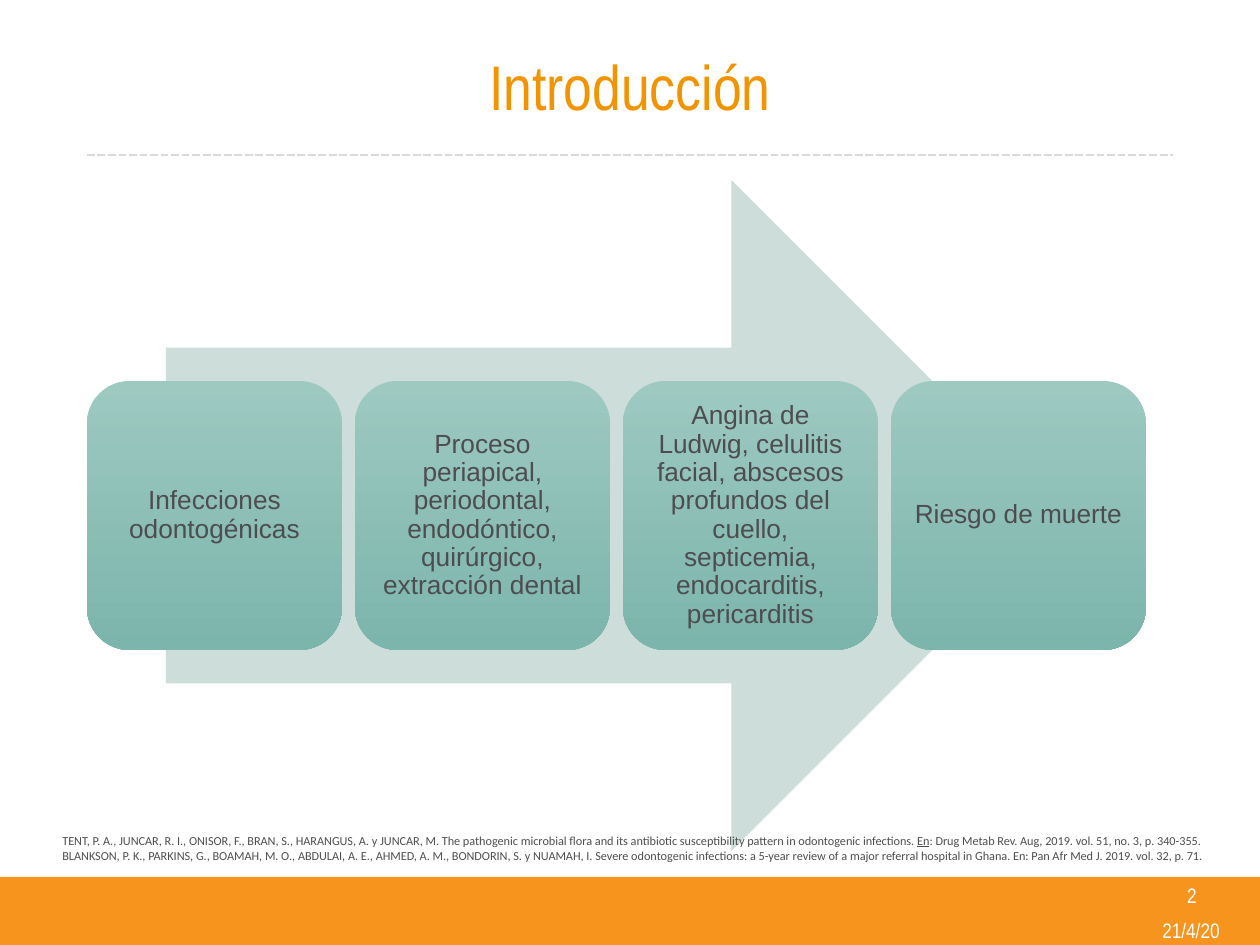
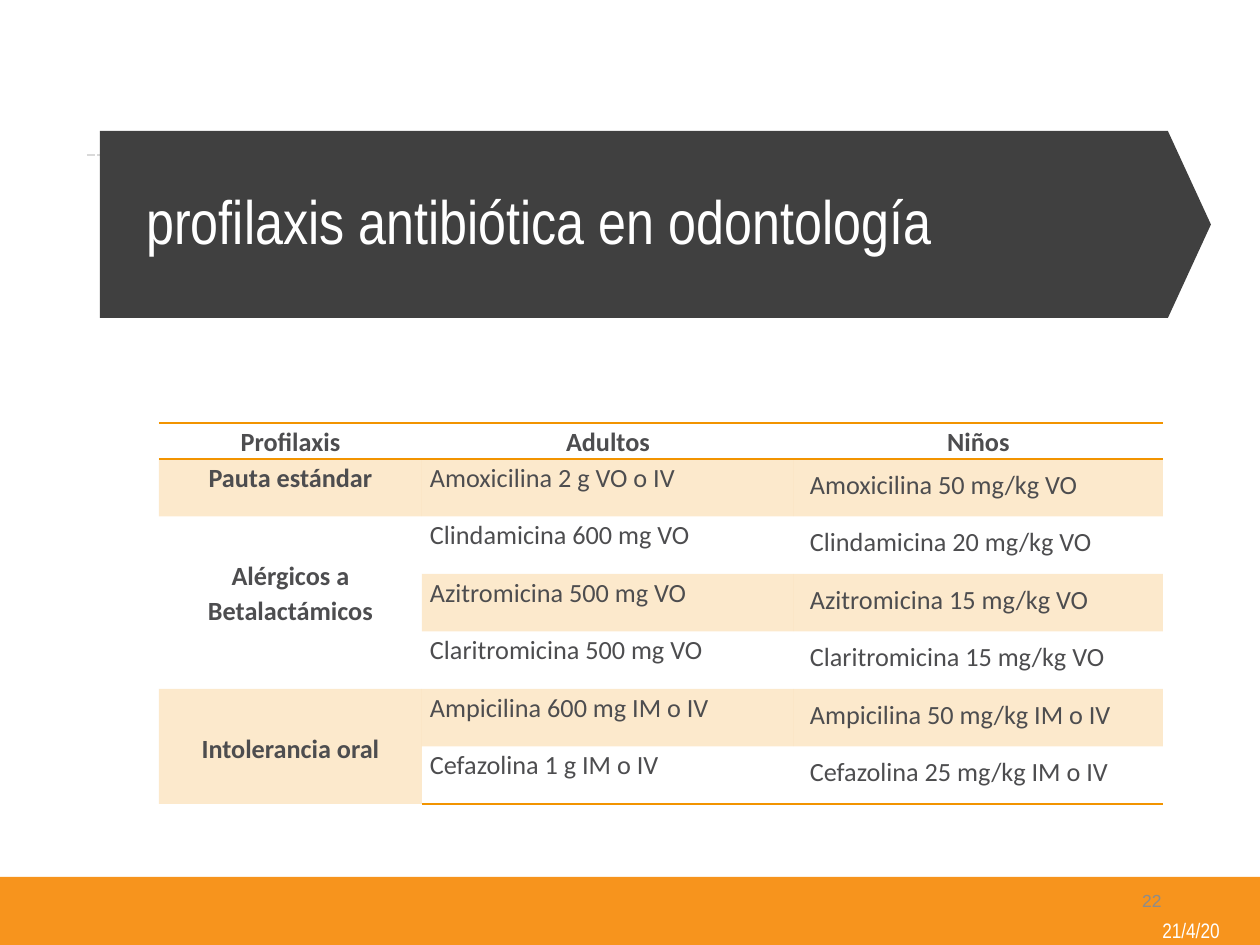
import pptx
import pptx.util
import pptx.dml.color
import pptx.enum.dml
import pptx.enum.shapes
import pptx.enum.text
import pptx.oxml
import pptx.oxml.ns
import lxml.etree

RGB = pptx.dml.color.RGBColor
SHAPE = pptx.enum.shapes.MSO_SHAPE
ALIGN = pptx.enum.text.PP_ALIGN
ANCHOR = pptx.enum.text.MSO_ANCHOR
Pt = pptx.util.Pt

PX_PER_INCH = 126
SLIDE_WIDTH, SLIDE_HEIGHT = 1260, 945

WHITE = RGB(0xFF, 0xFF, 0xFF)
BAND_ORANGE = RGB(0xF7, 0x94, 0x1D)
ACCENT = RGB(0xF2, 0x94, 0x00)
INK = RGB(0x4D, 0x4D, 0x4F)
RULE_GREY = RGB(0xD9, 0xD9, 0xD9)
NUMBER_GREY = RGB(0x8C, 0x8C, 0x8C)
BANNER_DARK = RGB(0x40, 0x40, 0x40)
ARROW_MIST = RGB(0xCC, 0xDD, 0xDA)
STEP_TOP = RGB(0x9D, 0xC9, 0xC1)
STEP_BOTTOM = RGB(0x7C, 0xB5, 0xAC)

TITLE_FONT = {"name": "Arial Narrow", "size": Pt(36)}
BANNER_FONT = {"name": "Arial Narrow", "size": Pt(35)}
FOOTER_FONT = {"name": "Arial Narrow", "size": Pt(12)}
NUMBER_FONT = {"name": "Arial", "size": Pt(10)}
STEP_FONT = {"name": "Arial", "size": Pt(15)}
REFERENCE_FONT = {"name": "Calibri", "size": Pt(7)}
DOSE_FONT = {"name": "Calibri", "size": Pt(15), "bold": False}
LABEL_FONT = {**DOSE_FONT, "bold": True}

CENTERED = {"alignment": ALIGN.CENTER}
JUSTIFIED = {"alignment": ALIGN.JUSTIFY}
RIGHT = {"alignment": ALIGN.RIGHT}
TIGHT_LEFT = {"alignment": ALIGN.LEFT, "line_spacing": 0.9}
TIGHT_CENTER = {"alignment": ALIGN.CENTER, "line_spacing": 0.9}
CELL_LEFT = {"alignment": ALIGN.LEFT, "line_spacing": 1.07}
CELL_CENTER = {"alignment": ALIGN.CENTER, "line_spacing": 1.07}

DATE = "21/4/20"
INTRO_TITLE = "Introducción"
STEPS = [
    "Infecciones odontogénicas",
    "Proceso periapical, periodontal, endodóntico, quirúrgico, extracción dental",
    "Angina de Ludwig, celulitis facial, abscesos profundos del cuello, "
    "septicemia, endocarditis, pericarditis",
    "Riesgo de muerte",
]
REFERENCES = [
    [
        ("TENT, P. A., JUNCAR, R. I., ONISOR, F., BRAN, S., HARANGUS, A. y JUNCAR, M. "
         "The pathogenic microbial flora and its antibiotic susceptibility pattern "
         "in odontogenic infections. ", {}),
        ("En", {"underline": True}),
        (": Drug Metab Rev. Aug, 2019. vol. 51, no. 3, p. 340-355.", {}),
    ],
    [
        ("BLANKSON, P. K., PARKINS, G., BOAMAH, M. O., ABDULAI, A. E., AHMED, A. M., "
         "BONDORIN, S. y NUAMAH, I. Severe odontogenic infections: a 5-year review of a "
         "major referral hospital in Ghana. En: Pan Afr Med J. 2019. vol. 32, p. 71.", {}),
    ],
]

PROPHYLAXIS_TITLE = "profilaxis antibiótica en odontología"
HEADINGS = ["Profilaxis", "Adultos", "Niños"]
REGIMENS = [
    {"label": ["Pauta estándar"], "tinted": True, "margins": (8, 1, 8, 0),
     "doses": [("Amoxicilina 2 g VO o IV", "Amoxicilina 50 mg/kg VO")]},
    {"label": ["Alérgicos a", "Betalactámicos"], "tinted": False, "margins": (16, 42, 16, 8),
     "doses": [("Clindamicina 600 mg VO", "Clindamicina 20 mg/kg VO"),
               ("Azitromicina 500 mg VO", "Azitromicina 15 mg/kg VO"),
               ("Claritromicina 500 mg VO", "Claritromicina 15 mg/kg VO")]},
    {"label": ["Intolerancia oral"], "tinted": True, "margins": (16, 42, 16, 8),
     "doses": [("Ampicilina 600 mg IM o IV", "Ampicilina 50 mg/kg IM o IV"),
               ("Cefazolina 1 g IM o IV", "Cefazolina 25 mg/kg IM o IV")]},
]
HEADING_MARGINS = (13, 1, 13, 0)
ADULT_MARGINS = (8, 1, 8, 0)
CHILD_MARGINS = (16, 8, 16, 8)
COLUMN_WIDTHS = [263, 372, 369]
TABLE_LEFT, TABLE_TOP, TABLE_HEIGHT, HEADING_HEIGHT = 159, 423, 381, 36
TINT_ALPHA = 20


def px(length):
    return round(length * pptx.util.Inches(1) / PX_PER_INCH)


def box(*lengths):
    return [px(length) for length in lengths]


def apply(target, values):
    for key, value in values.items():
        setattr(target, key, value)


def margins(left, top, right, bottom):
    return {"margin_left": px(left), "margin_top": px(top),
            "margin_right": px(right), "margin_bottom": px(bottom)}


def write(frame, lines, font, color, layout):
    for index, line in enumerate(lines):
        paragraph = frame.add_paragraph() if index else frame.paragraphs[0]
        apply(paragraph, layout)
        pieces = [(line, {})] if isinstance(line, str) else line
        for text, extra in pieces:
            run = paragraph.add_run()
            run.text = text
            apply(run.font, {**font, **extra})
            run.font.color.rgb = color


def add_text(slide, place, lines, font, color, layout, anchor=ANCHOR.MIDDLE):
    frame = slide.shapes.add_textbox(*box(*place)).text_frame
    apply(frame, {"word_wrap": True, "vertical_anchor": anchor})
    write(frame, lines, font, color, layout)


def add_figure(slide, preset, place, color=None):
    figure = slide.shapes.add_shape(preset, *box(*place))
    figure.shadow.inherit = False
    figure.line.fill.background()
    if color is not None:
        figure.fill.solid()
        figure.fill.fore_color.rgb = color
    return figure


def add_base_slide(deck):
    slide = deck.slides.add_slide(deck.slide_layouts[6])
    add_figure(slide, SHAPE.RECTANGLE, (0, 877, SLIDE_WIDTH, SLIDE_HEIGHT - 877), BAND_ORANGE)
    add_text(slide, (1124, 917, 134, 26), [DATE], FOOTER_FONT, WHITE, CENTERED)
    rule = slide.shapes.add_connector(
        pptx.enum.shapes.MSO_CONNECTOR.STRAIGHT, *box(87, 155, 1173, 155))
    rule.line.color.rgb = RULE_GREY
    apply(rule.line, {"width": Pt(1.5), "dash_style": pptx.enum.dml.MSO_LINE.SQUARE_DOT})
    lxml.etree.SubElement(rule._element.spPr, pptx.oxml.ns.qn("a:effectLst"))
    return slide


def add_step(slide, index, text):
    step = add_figure(slide, SHAPE.ROUNDED_RECTANGLE, (87 + 268 * index, 381, 255, 269))
    step.fill.gradient()
    step.fill.gradient_angle = 270
    for stop, position, color in zip(
            step.fill.gradient_stops, (0, 1), (STEP_TOP, STEP_BOTTOM)):
        stop.position = position
        stop.color.rgb = color
    apply(step.text_frame, {"word_wrap": True, "vertical_anchor": ANCHOR.MIDDLE,
                            **margins(8, 8, 8, 8)})
    write(step.text_frame, [text], STEP_FONT, INK, TIGHT_CENTER)


def build_introduction(deck):
    slide = add_base_slide(deck)
    add_figure(slide, SHAPE.RIGHT_ARROW, (166, 180, 901, 671), ARROW_MIST)
    for index, text in enumerate(STEPS):
        add_step(slide, index, text)
    add_text(slide, (1126, 876, 132, 38), ["2"], FOOTER_FONT, WHITE, CENTERED)
    add_text(slide, (87, 18, 1086, 135), [INTRO_TITLE], TITLE_FONT, ACCENT, CENTERED)
    add_text(slide, (50, 827, 1210, 43), REFERENCES, REFERENCE_FONT, INK, JUSTIFIED, ANCHOR.TOP)


def finish_cell(cell, lined_sides, tinted):
    properties = cell._tc.get_or_add_tcPr()
    for side in "LRTB":
        edge = lxml.etree.SubElement(properties, pptx.oxml.ns.qn(f"a:ln{side}"))
        if side in lined_sides:
            edge.set("w", str(Pt(1)))
            paint = lxml.etree.SubElement(edge, pptx.oxml.ns.qn("a:solidFill"))
            lxml.etree.SubElement(paint, pptx.oxml.ns.qn("a:srgbClr"), val=str(ACCENT))
        else:
            lxml.etree.SubElement(edge, pptx.oxml.ns.qn("a:noFill"))
    if tinted:
        cell.fill.solid()
        cell.fill.fore_color.rgb = ACCENT
        tint = properties.find(pptx.oxml.ns.qn("a:solidFill"))[0]
        lxml.etree.SubElement(tint, pptx.oxml.ns.qn("a:alpha"), val=str(TINT_ALPHA * 1000))
    else:
        cell.fill.background()


def fill_cell(cell, lines, font, layout, insets):
    apply(cell, {"vertical_anchor": ANCHOR.TOP, **margins(*insets)})
    write(cell.text_frame, lines, font, INK, layout)


def add_regimen_table(slide):
    dose_count = sum(len(regimen["doses"]) for regimen in REGIMENS)
    table = slide.shapes.add_table(
        dose_count + 1, len(HEADINGS),
        *box(TABLE_LEFT, TABLE_TOP, sum(COLUMN_WIDTHS), TABLE_HEIGHT)).table
    apply(table, {"first_row": False, "horz_banding": False})
    for column, width in zip(table.columns, COLUMN_WIDTHS):
        column.width = px(width)
    for index, row in enumerate(table.rows):
        row.height = px((TABLE_HEIGHT - HEADING_HEIGHT) / dose_count if index else HEADING_HEIGHT)

    for column, heading in enumerate(HEADINGS):
        cell = table.cell(0, column)
        fill_cell(cell, [heading], LABEL_FONT, CELL_CENTER, HEADING_MARGINS)
        finish_cell(cell, "TB", False)

    row = 1
    for regimen in REGIMENS:
        first = row
        for adult, child in regimen["doses"]:
            sides = ("T" if row == 1 else "") + ("B" if row == dose_count else "")
            striped = row % 2 == 1
            for column, tinted in enumerate((regimen["tinted"], striped, striped)):
                finish_cell(table.cell(row, column), sides, tinted)
            fill_cell(table.cell(row, 1), [adult], DOSE_FONT, CELL_LEFT, ADULT_MARGINS)
            fill_cell(table.cell(row, 2), [child], DOSE_FONT, CELL_LEFT, CHILD_MARGINS)
            row += 1
        label = table.cell(first, 0)
        if row - first > 1:
            label.merge(table.cell(row - 1, 0))
        fill_cell(label, regimen["label"], LABEL_FONT, CELL_CENTER, regimen["margins"])


def build_prophylaxis(deck):
    slide = add_base_slide(deck)
    banner = add_figure(slide, SHAPE.RIGHT_ARROW, (100, 131, 1111, 187), BANNER_DARK)
    banner.adjustments[0] = 1
    banner.adjustments[1] = 0.23
    add_text(slide, (134, 166, 1036, 118), [PROPHYLAXIS_TITLE], BANNER_FONT, WHITE, TIGHT_LEFT)
    add_text(slide, (890, 876, 284, 50), ["22"], NUMBER_FONT, NUMBER_GREY, RIGHT)
    add_regimen_table(slide)


def main():
    deck = pptx.Presentation()
    apply(deck, {"slide_width": px(SLIDE_WIDTH), "slide_height": px(SLIDE_HEIGHT)})
    build_introduction(deck)
    build_prophylaxis(deck)
    deck.save("out.pptx")


if __name__ == "__main__":
    main()
